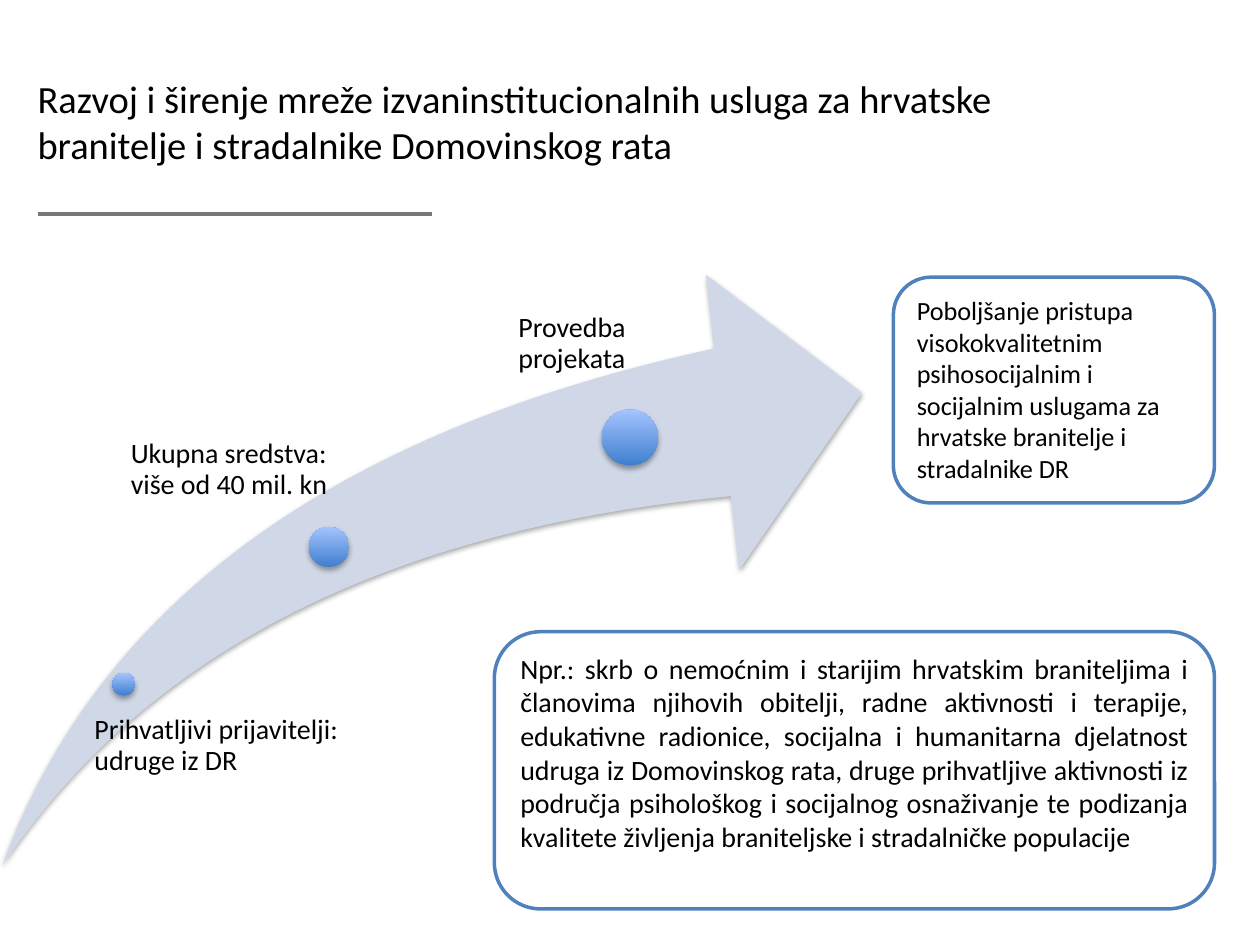
import lxml.etree
import pptx
import pptx.dml.color
import pptx.enum.shapes
import pptx.enum.text
import pptx.oxml.ns
import pptx.util

Pt = pptx.util.Pt
RGBColor = pptx.dml.color.RGBColor
MSO_SHAPE = pptx.enum.shapes.MSO_SHAPE
MSO_ANCHOR = pptx.enum.text.MSO_ANCHOR
PP_ALIGN = pptx.enum.text.PP_ALIGN
qn = pptx.oxml.ns.qn

BLACK = RGBColor(0x00, 0x00, 0x00)
WHITE = RGBColor(0xFF, 0xFF, 0xFF)
GRAY = RGBColor(0x77, 0x78, 0x77)
BLUE = RGBColor(0x4F, 0x81, 0xBD)
PALE_BLUE = RGBColor(0xD0, 0xD8, 0xE8)
DOT_DARK = RGBColor(0x3F, 0x7F, 0xCE)
DOT_LIGHT = RGBColor(0xA4, 0xC4, 0xFF)


def write_text(shape, text, size):
    frame = shape.text_frame
    frame.word_wrap = True
    frame.text = text
    paragraph = frame.paragraphs[0]
    paragraph.alignment = PP_ALIGN.LEFT
    font = paragraph.runs[0].font
    font.name = "Calibri"
    font.size = Pt(size)
    font.color.rgb = BLACK
    return frame


def add_soft_shadow(shape):
    """Remove the outline and cast a faint shadow straight down."""
    shape.line.fill.background()
    shape.shadow.inherit = False
    effects = shape._element.spPr.find(qn("a:effectLst"))
    shadow = lxml.etree.SubElement(
        effects, qn("a:outerShdw"), blurRad=str(Pt(3.1)), dist=str(Pt(1.8)),
        dir="5400000", rotWithShape="0")
    color = lxml.etree.SubElement(shadow, qn("a:srgbClr"), val=str(BLACK))
    lxml.etree.SubElement(color, qn("a:alpha"), val="35000")


presentation = pptx.Presentation()
presentation.slide_width = Pt(720)
presentation.slide_height = Pt(540)
slide = presentation.slides.add_slide(presentation.slide_layouts[6])
shapes = slide.shapes

# Rising arrow
arrow = shapes.add_shape(MSO_SHAPE.SWOOSH_ARROW, Pt(1.5), Pt(157), Pt(491), Pt(337.5))
arrow.adjustments[0] = 0.25
arrow.adjustments[1] = 0.25
arrow.fill.solid()
arrow.fill.fore_color.rgb = PALE_BLUE
add_soft_shadow(arrow)

# Milestones: dot (left, top, diameter), label (left, top, width, height, inset), text
milestones = [
    ((64.2, 384.5, 13), (47.5, 409, 163, 45, 6.5), "Prihvatljivi prijavitelji: udruge iz DR"),
    ((176.4, 301, 23), (62.6, 251.3, 147, 41, 12.2), "Ukupna sredstva: više od 40 mil. kn"),
    ((344, 234, 32), (279.4, 179.3, 107.3, 58.3, 16.8), "Provedba projekata"),
]
for (dot_left, dot_top, diameter), (left, top, width, height, inset), text in milestones:
    dot = shapes.add_shape(
        MSO_SHAPE.OVAL, Pt(dot_left), Pt(dot_top), Pt(diameter), Pt(diameter))
    dot.fill.gradient()
    dot.fill.gradient_angle = 90
    for stop, color in zip(dot.fill.gradient_stops, (DOT_DARK, DOT_LIGHT)):
        stop.color.rgb = color
    add_soft_shadow(dot)

    label = shapes.add_textbox(Pt(left), Pt(top), Pt(width), Pt(height))
    frame = write_text(label, text, 16)
    frame.margin_left = Pt(inset)
    frame.margin_top = frame.margin_right = frame.margin_bottom = 0
    frame.paragraphs[0].line_spacing = 0.9

# Title and rule below it
rule = shapes.add_connector(
    pptx.enum.shapes.MSO_CONNECTOR.STRAIGHT, Pt(21.6), Pt(122.4), Pt(247), Pt(122.4))
rule.line.color.rgb = GRAY
rule.line.width = Pt(2)
lxml.etree.SubElement(rule._element.spPr, qn("a:effectLst"))

title = shapes.add_textbox(Pt(14.4), Pt(26), Pt(643), Pt(86.4))
title_frame = write_text(
    title,
    "Razvoj i širenje mreže izvaninstitucionalnih usluga za hrvatske "
    "branitelje i stradalnike Domovinskog rata", 22)
title_frame.vertical_anchor = MSO_ANCHOR.MIDDLE

# Outlined boxes: left, top, width, height, size, alignment, text
boxes = [
    (510.5, 158.4, 183.5, 129, 15, PP_ALIGN.LEFT,
     "Poboljšanje pristupa visokokvalitetnim psihosocijalnim i socijalnim "
     "uslugama za hrvatske branitelje i stradalnike DR"),
    (282.5, 361, 411.5, 158.4, 16, PP_ALIGN.JUSTIFY,
     "Npr.: skrb o nemoćnim i starijim hrvatskim braniteljima i članovima "
     "njihovih obitelji, radne aktivnosti i terapije, edukativne radionice, "
     "socijalna i humanitarna djelatnost udruga iz Domovinskog rata, druge "
     "prihvatljive aktivnosti iz područja psihološkog i socijalnog osnaživanje "
     "te podizanja kvalitete življenja braniteljske i stradalničke populacije"),
]
for left, top, width, height, size, alignment, text in boxes:
    box = shapes.add_shape(
        MSO_SHAPE.ROUNDED_RECTANGLE, Pt(left), Pt(top), Pt(width), Pt(height))
    box.shadow.inherit = False
    box.fill.solid()
    box.fill.fore_color.rgb = WHITE
    box.line.color.rgb = BLUE
    box.line.width = Pt(2)
    frame = write_text(box, text, size)
    frame.vertical_anchor = MSO_ANCHOR.TOP
    frame.paragraphs[0].alignment = alignment

presentation.save("out.pptx")
